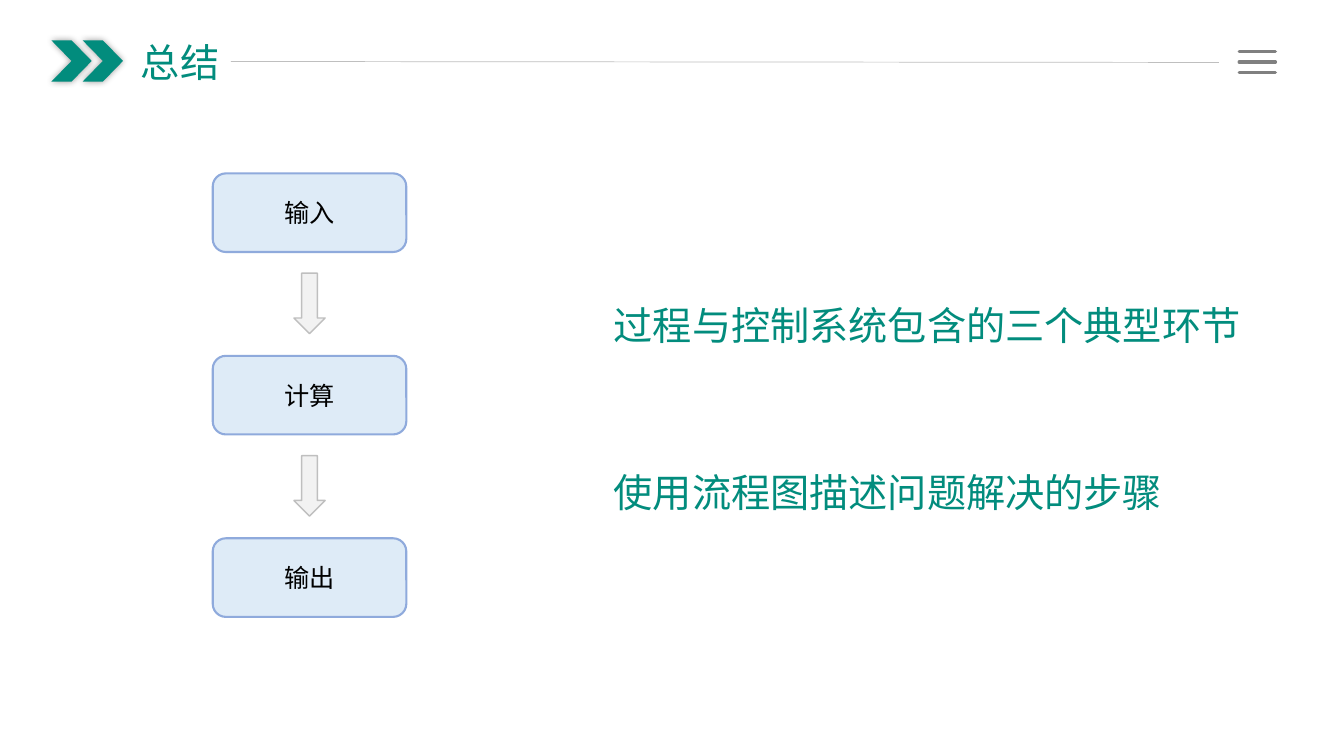
from lxml import etree
from pptx import Presentation
from pptx import util as u
from pptx.dml.color import RGBColor
from pptx.enum import shapes, text
from pptx.oxml import ns

TITLE = "总结"
STEPS = ["输入", "计算", "输出"]
POINTS = [
    ("过程与控制系统包含的三个典型环节", 2.71, 6.5),
    ("使用流程图描述问题解决的步骤", 4.36, 5.86),
]

THEME = {
    "accent": "028C7D", "step_fill": "DEEBF7", "step_line": "8FAADC",
    "arrow_fill": "F2F2F2", "rule": "BFBFBF", "menu": "808080",
    "ink": "000000", "shadow": "000000",
    "heading_size": 28, "step_size": 18,
    "heading_font": "Noto Sans CJK JP", "step_font": "Noto Sans CJK SC",
}

CHEVRON = {"left": 0.51, "top": 0.4, "width": 0.4, "height": 0.41, "pitch": 0.31}
MENU = {"left": 12.29, "right": 12.65, "top": 0.51, "pitch": 0.105, "bars": 3}
STEP = {"left": 2.11, "top": 1.72, "width": 1.92, "height": 0.78, "pitch": 1.81}
ARROW = {"width": 0.31, "height": 0.6, "gap": 0.21}
POINT = {"left": 5.99, "height": 0.73}

SHAPE = shapes.MSO_SHAPE
ALIGN = text.PP_ALIGN

deck = Presentation()
deck.slide_width, deck.slide_height = u.Inches(13.33), u.Inches(7.5)
slide = deck.slides.add_slide(deck.slide_layouts[6])


def color(name):
    return RGBColor.from_string(THEME[name])


def apply(target, values):
    for key, value in values.items():
        setattr(target, key, value)


def add_block(kind, left, top, width, height, fill, outline=None, weight=1):
    block = slide.shapes.add_shape(kind, *map(u.Inches, (left, top, width, height)))
    block.shadow.inherit = False
    block.fill.solid()
    block.fill.fore_color.rgb = color(fill)
    if outline:
        block.line.color.rgb = color(outline)
        block.line.width = u.Pt(weight)
    else:
        block.line.fill.background()
    return block


def add_glow(block):
    effects = block._element.spPr.find(ns.qn("a:effectLst"))
    glow = etree.SubElement(effects, ns.qn("a:outerShdw"), blurRad=str(u.Pt(5)),
                            dist="0", dir="0", algn="ctr", rotWithShape="0")
    tint = etree.SubElement(glow, ns.qn("a:srgbClr"), val=THEME["shadow"])
    etree.SubElement(tint, ns.qn("a:alpha"), val="40000")


def add_rule(start, end, stroke, weight, cap="flat"):
    rule = slide.shapes.add_connector(
        shapes.MSO_CONNECTOR.STRAIGHT, *map(u.Inches, start + end))
    rule.line.color.rgb = color(stroke)
    rule.line.width = u.Pt(weight)
    rule.line._ln.set("cap", cap)
    etree.SubElement(rule._element.spPr, ns.qn("a:effectLst"))


def write(holder, words, style, ink, frame_format, paragraph_format):
    frame = holder.text_frame
    apply(frame, frame_format)
    paragraph = frame.paragraphs[0]
    apply(paragraph, paragraph_format)
    run = paragraph.add_run()
    run.text = words
    face = THEME[style + "_font"]
    apply(run.font, {"size": u.Pt(THEME[style + "_size"]), "name": face})
    run.font.color.rgb = color(ink)
    etree.SubElement(run.font._element, ns.qn("a:ea"), typeface=face)


def add_heading(words, left, top, width, height, wrap, paragraph_format):
    heading = slide.shapes.add_textbox(*map(u.Inches, (left, top, width, height)))
    write(heading, words, "heading", "accent",
          {"word_wrap": wrap, "auto_size": text.MSO_AUTO_SIZE.SHAPE_TO_FIT_TEXT},
          paragraph_format)


for index in range(2):
    add_glow(add_block(SHAPE.CHEVRON, CHEVRON["left"] + index * CHEVRON["pitch"],
                       CHEVRON["top"], CHEVRON["width"], CHEVRON["height"], "accent"))

add_rule((2.29, 0.61), (12.09, 0.62), "rule", 0.5)
for index in range(MENU["bars"]):
    level = MENU["top"] + index * MENU["pitch"]
    add_rule((MENU["left"], level), (MENU["right"], level), "menu", 2.25, "rnd")

add_heading(TITLE, 1.3, 0.33, 0.99, 0.57, False, {"alignment": ALIGN.LEFT})
for words, top, width in POINTS:
    add_heading(words, POINT["left"], top, width, POINT["height"], True,
                {"alignment": ALIGN.JUSTIFY, "line_spacing": 1.5})

arrow_left = STEP["left"] + (STEP["width"] - ARROW["width"]) / 2
for index, words in enumerate(STEPS):
    top = STEP["top"] + index * STEP["pitch"]
    step = add_block(SHAPE.ROUNDED_RECTANGLE, STEP["left"], top, STEP["width"],
                     STEP["height"], "step_fill", "step_line", 1.5)
    write(step, words, "step", "ink",
          {"word_wrap": True, "vertical_anchor": text.MSO_ANCHOR.MIDDLE},
          {"alignment": ALIGN.CENTER})
    if index < len(STEPS) - 1:
        add_block(SHAPE.DOWN_ARROW, arrow_left, top + STEP["height"] + ARROW["gap"],
                  ARROW["width"], ARROW["height"], "arrow_fill", "rule")

deck.save("out.pptx")
